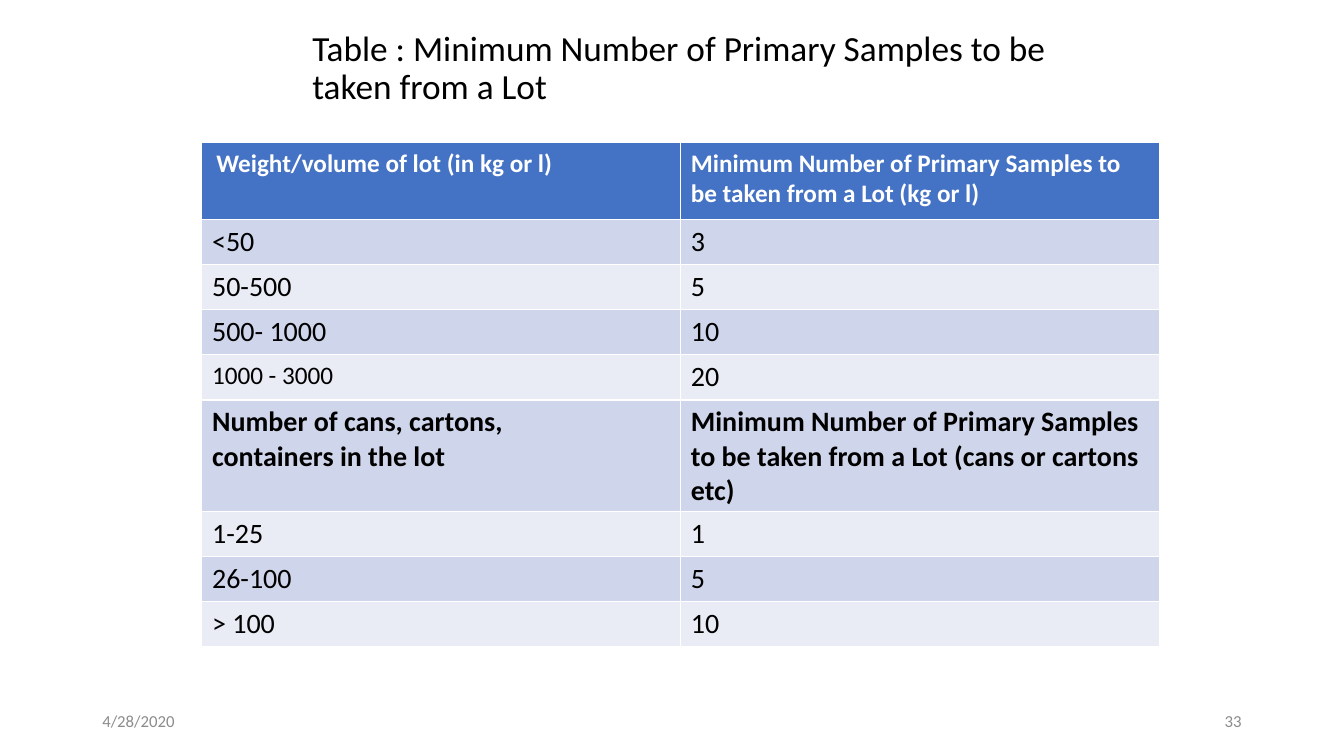
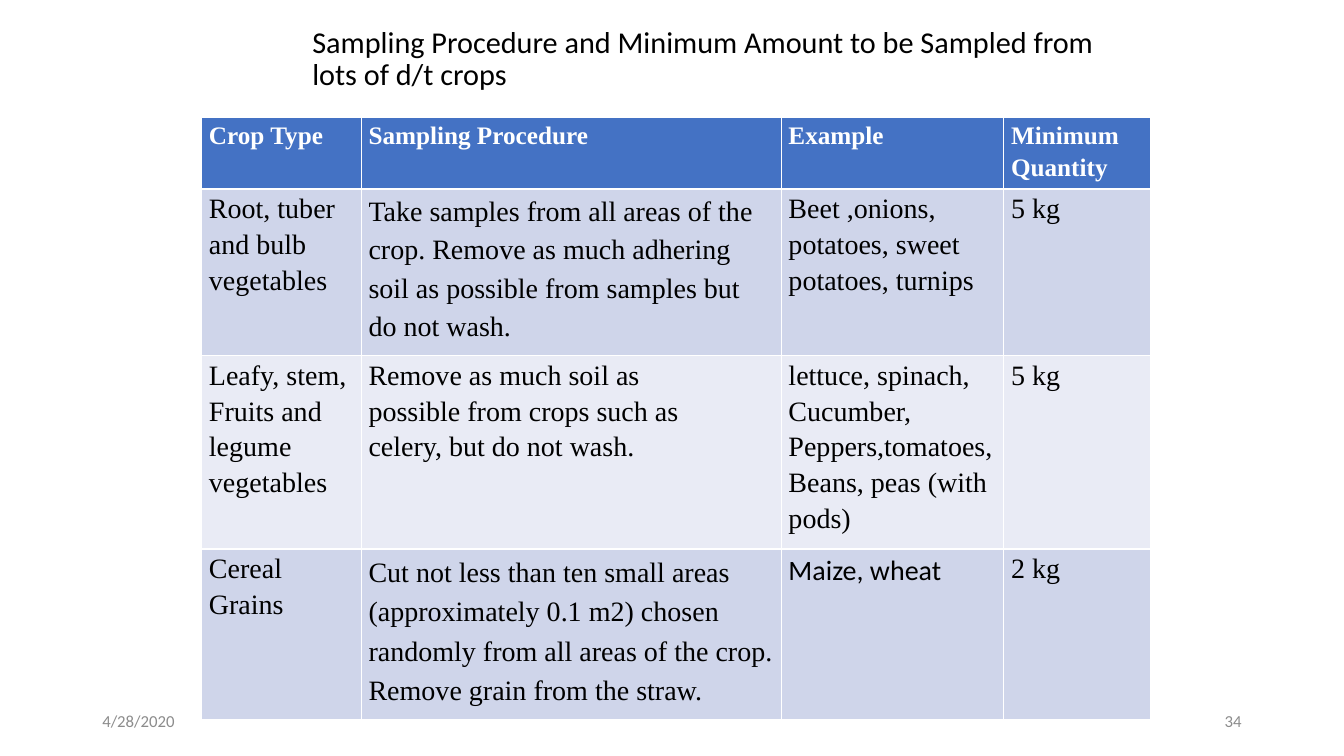
from pptx import Presentation
from pptx.dml.color import RGBColor
from pptx.enum.text import MSO_ANCHOR as ANCHOR, PP_ALIGN as ALIGN
from pptx.util import Pt
from pptx.oxml import parse_xml
from pptx.oxml.ns import nsdecls

PX = 9525
HEADER, BANDS = "4472C4", ("E9EBF5", "CFD5EA")
WHITE, BLACK, GREY = "FFFFFF", "000000", "8C8C8C"
SANS, SERIF = "Calibri", "Times New Roman"


def rgb(color):
    return RGBColor.from_string(color)


def write(tf, text, size=20, font=SANS, color=BLACK, bold=False,
          align=ALIGN.LEFT, spacing=1.0):
    tf.word_wrap = True
    for i, line in enumerate(text.split("\n")):
        p = tf.paragraphs[0] if i == 0 else tf.add_paragraph()
        p.alignment = align
        p.line_spacing = spacing
        r = p.add_run()
        r.text = line
        r.font.size = Pt(size)
        r.font.name = font
        r.font.bold = bold
        r.font.color.rgb = rgb(color)


slides = [
    dict(
        number="33",
        title="Table : Minimum Number of Primary Samples to be taken from a Lot",
        title_size=25.2, title_height=84,
        top=136, cols=[456, 456], rows=[73] + [43] * 4 + [106] + [43] * 3,
        inset=(10, 5), format=dict(font=SANS),
        cells=[
            ["Weight/volume of lot (in kg or l)",
             "Minimum Number of Primary Samples to be taken from a Lot (kg or l)"],
            ["<50", "3"],
            ["50-500", "5"],
            ["500- 1000", "10"],
            ["1000 - 3000", "20"],
            ["Number of cans, cartons,\ncontainers in the lot",
             "Minimum Number of Primary Samples to be taken from a Lot (cans or cartons etc)"],
            ["1-25", "1"],
            ["26-100", "5"],
            ["> 100", "10"],
        ],
        special={(4, 0): dict(size=18), (5, 0): dict(bold=True), (5, 1): dict(bold=True)},
        left_insets={(0, 0): 14},
    ),
    dict(
        number="34",
        title="Sampling Procedure and Minimum Amount to be Sampled from lots of d/t crops",
        title_size=21.6, title_height=66,
        top=112, cols=[152, 400, 212, 140], rows=[68, 146, 183, 162],
        inset=(7, 0), format=dict(font=SERIF, spacing=1.15),
        cells=[
            ["Crop Type", "Sampling Procedure", "Example", "Minimum\nQuantity"],
            ["Root, tuber\nand bulb\nvegetables",
             "Take samples from all areas of the crop. Remove as much adhering soil "
             "as possible from samples but do not wash.",
             "Beet ,onions, potatoes, sweet potatoes, turnips", "5 kg"],
            ["Leafy, stem,\nFruits and\nlegume\nvegetables",
             "Remove as much soil as\npossible from crops such as\ncelery, but do not wash.",
             "lettuce, spinach, Cucumber, Peppers,tomatoes,Beans, peas (with pods)", "5 kg"],
            ["Cereal\nGrains",
             "Cut not less than ten small areas (approximately 0.1 m2) chosen randomly "
             "from all areas of the crop. Remove grain from the straw.",
             "Maize, wheat", "2 kg"],
        ],
        special={(1, 1): dict(spacing=1.24), (3, 1): dict(spacing=1.27),
                 (3, 2): dict(font=SANS)},
        left_insets={},
    ),
]

prs = Presentation()
prs.slide_width, prs.slide_height = 1280 * PX, 720 * PX

for data in slides:
    s = prs.slides.add_slide(prs.slide_layouts[6])
    texts = [
        (data["title"], 288, 24, 784, data["title_height"],
         dict(size=data["title_size"], spacing=0.9)),
        ("4/28/2020", 88, 667, 288, 38, dict(size=12, color=GREY)),
        (data["number"], 904, 667, 288, 38, dict(size=12, color=GREY, align=ALIGN.RIGHT)),
    ]
    for text, x, y, w, h, fmt in texts:
        tf = s.shapes.add_textbox(x * PX, y * PX, w * PX, h * PX).text_frame
        tf.vertical_anchor = ANCHOR.MIDDLE
        write(tf, text, **fmt)

    cols, rows = data["cols"], data["rows"]
    table = s.shapes.add_table(len(rows), len(cols), 192 * PX, data["top"] * PX,
                               sum(cols) * PX, sum(rows) * PX).table
    for column, w in zip(table.columns, cols):
        column.width = w * PX
    for row, h in zip(table.rows, rows):
        row.height = h * PX

    side, end = data["inset"]
    for i, line in enumerate(data["cells"]):
        for j, text in enumerate(line):
            cell = table.cell(i, j)
            cell.margin_left = data["left_insets"].get((i, j), side) * PX
            cell.margin_right = side * PX
            cell.margin_top = cell.margin_bottom = end * PX
            tcPr = cell._tc.get_or_add_tcPr()
            for edge in "LRTB":
                tcPr.append(parse_xml(
                    f'<a:ln{edge} {nsdecls("a")} w="12700"><a:solidFill>'
                    f'<a:srgbClr val="{WHITE}"/></a:solidFill></a:ln{edge}>'))
            cell.fill.solid()
            cell.fill.fore_color.rgb = rgb(BANDS[i % 2] if i else HEADER)
            fmt = dict(data["format"])
            if i == 0:
                fmt.update(size=18, color=WHITE, bold=True)
            fmt.update(data["special"].get((i, j), {}))
            write(cell.text_frame, text, **fmt)

prs.save("out.pptx")
